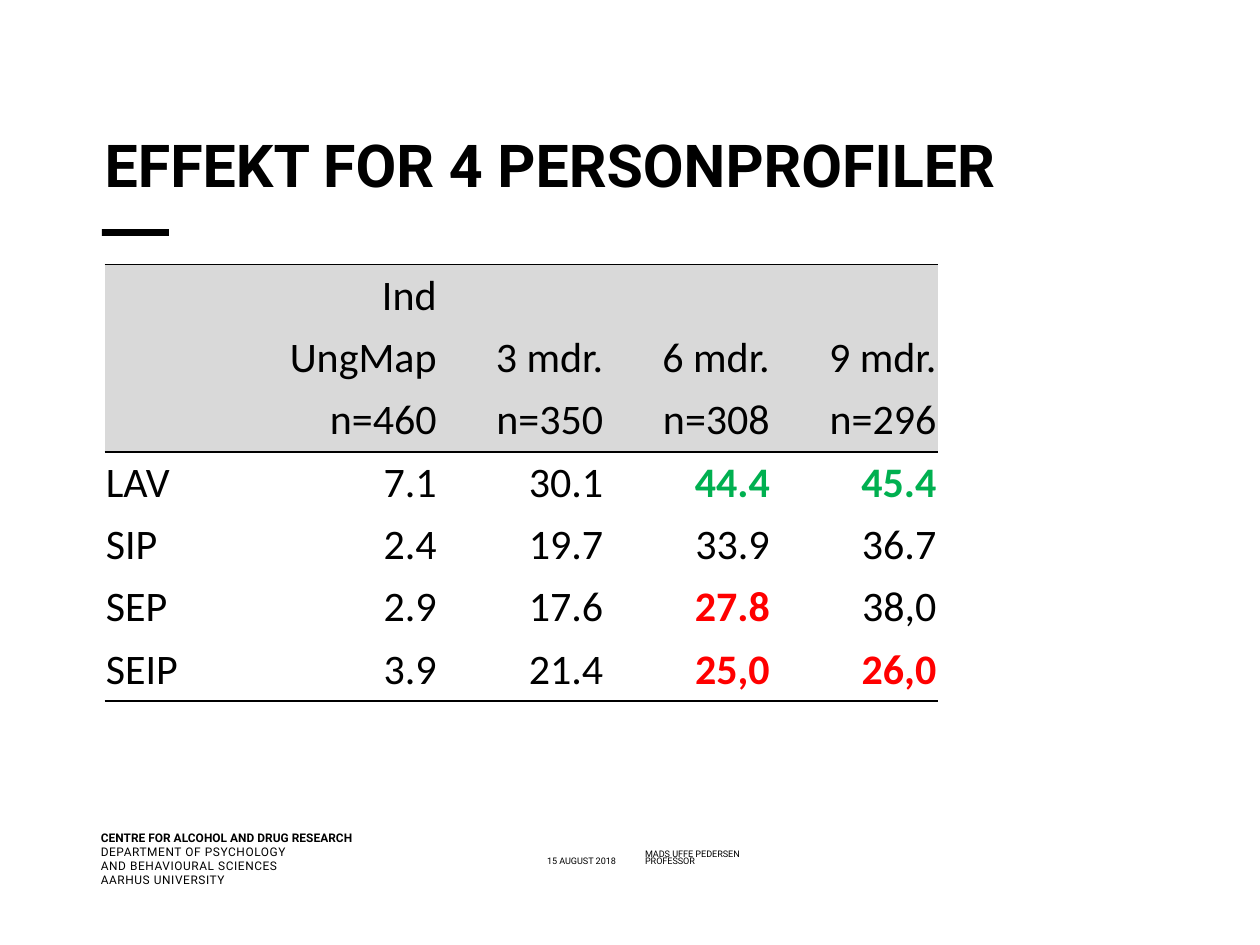
from copy import deepcopy

from lxml.etree import SubElement
from pptx import Presentation
from pptx.dml.color import RGBColor
from pptx.enum.shapes import MSO_SHAPE as SHAPE
from pptx.enum.text import MSO_ANCHOR as ANCHOR, PP_ALIGN as ALIGN
from pptx.oxml import parse_xml
from pptx.oxml.ns import nsdecls, qn
from pptx.util import Pt

BLACK, GREY, GREEN, RED = "000000", "D9D9D9", "00B050", "FF0000"


def rgb(code):
    return RGBColor.from_string(code)


def write(frame, text, size, font="Roboto", color=BLACK, bold=False,
          align=ALIGN.LEFT, space=None, track=None):
    """Fill the first paragraph; newlines become line breaks of the same format."""
    par = frame.paragraphs[0]
    par.text = text
    par.alignment = align
    if space:
        par.line_spacing = space
    for run in par.runs:
        run.font.size, run.font.name, run.font.bold = Pt(size), font, bold
        run.font.color.rgb = rgb(color)
        if track:
            run.font._element.set("spc", str(track))
    for gap in par._p.findall(qn("a:br")):
        gap.insert(0, deepcopy(par.runs[0].font._element))


deck = Presentation()
deck.slide_width, deck.slide_height = Pt(720), Pt(540)
slide = deck.slides.add_slide(deck.slide_layouts[6])

bar = slide.shapes.add_shape(SHAPE.RECTANGLE, Pt(58.3), Pt(131), Pt(38.2), Pt(3.8))
bar.shadow.inherit = False
bar.fill.solid()
bar.fill.fore_color.rgb = rgb(BLACK)
bar.line.fill.background()

# Text, left, top, width, height, top inset, anchor, wrap, format
small = dict(size=5.2, space=0.95)
boxes = [
    ("MADS UFFE PEDERSEN", 368.6, 472.3, 176.4, 26.6, 20.2, ANCHOR.TOP, True, small),
    ("15 AUGUST 2018", 218.2, 472.3, 133.9, 34.6, 28.1, ANCHOR.TOP, True,
     dict(small, align=ALIGN.RIGHT)),
    ("PROFESSOR", 368.6, 472.3, 176.4, 34.6, 28.1, ANCHOR.TOP, True, small),
    ("DEPARTMENT OF PSYCHOLOGY\nAND BEHAVIOURAL SCIENCES\nAARHUS UNIVERSITY",
     57.6, 472.3, 139, 42.5, 10.1, ANCHOR.TOP, True, dict(size=6.8, track=30)),
    ("CENTRE FOR ALCOHOL AND DRUG RESEARCH", 57.6, 472.3, 144.7, 18.7, 2.2,
     ANCHOR.TOP, False, dict(size=6.8, bold=True)),
    ("EFFEKT FOR 4 PERSONPROFILER", 59.8, 11.5, 641.5, 103, 0, ANCHOR.BOTTOM, True,
     dict(size=33.8, bold=True, space=0.89)),
]
for text, left, top, width, height, inset, anchor, wrap, form in boxes:
    box = slide.shapes.add_textbox(Pt(left), Pt(top), Pt(width), Pt(height))
    frame = box.text_frame
    frame.margin_left = frame.margin_right = frame.margin_bottom = 0
    frame.margin_top = Pt(inset)
    frame.vertical_anchor = anchor
    frame.word_wrap = wrap
    write(frame, text, **form)

rows = [
    ["", "Ind", "", "", ""],
    ["", "UngMap", "3 mdr.", "6 mdr.", "9 mdr."],
    ["", "n=460", "n=350", "n=308", "n=296"],
    ["LAV", "7.1", "30.1", "44.4", "45.4"],
    ["SIP", "2.4", "19.7", "33.9", "36.7"],
    ["SEP", "2.9", "17.6", "27.8", "38,0"],
    ["SEIP", "3.9", "21.4", "25,0", "26,0"],
]
marks = {(3, 3): GREEN, (3, 4): GREEN, (5, 3): RED, (6, 3): RED, (6, 4): RED}
edges = {0: "lnT", 2: "lnB", 6: "lnB"}
heads = 3

table = slide.shapes.add_table(len(rows), 5, Pt(59.8), Pt(151.2), Pt(476), Pt(249.4)).table
table.first_row = table.horz_banding = False
# The plain style has neither fills nor grid lines
style = table._tbl.tblPr.find(qn("a:tableStyleId"))
style.text = "{2D5ABB26-0587-4C30-8999-92F81FD0307C}"
for col in table.columns:
    col.width = Pt(95.2)
for r, row in enumerate(rows):
    table.rows[r].height = Pt(36.5 if r in (2, 6) else 35.3)
    for c, text in enumerate(row):
        cell = table.cell(r, c)
        cell.margin_left = cell.margin_right = cell.margin_top = Pt(0.7)
        cell.margin_bottom = 0
        cell.vertical_anchor = ANCHOR.MIDDLE
        if r < heads:
            cell.fill.solid()
            cell.fill.fore_color.rgb = rgb(GREY)
        else:
            cell.fill.background()
        if text:
            write(cell.text_frame, text, 24, font="Calibri",
                  color=marks.get((r, c), BLACK), bold=(r, c) in marks,
                  align=ALIGN.RIGHT if c else ALIGN.LEFT)
        if r in edges:
            line = parse_xml(f'<a:{edges[r]} {nsdecls("a")} w="12700"/>')
            fill = SubElement(line, qn("a:solidFill"))
            SubElement(fill, qn("a:srgbClr"), val=BLACK)
            cell._tc.get_or_add_tcPr().insert(0, line)

deck.save("out.pptx")
